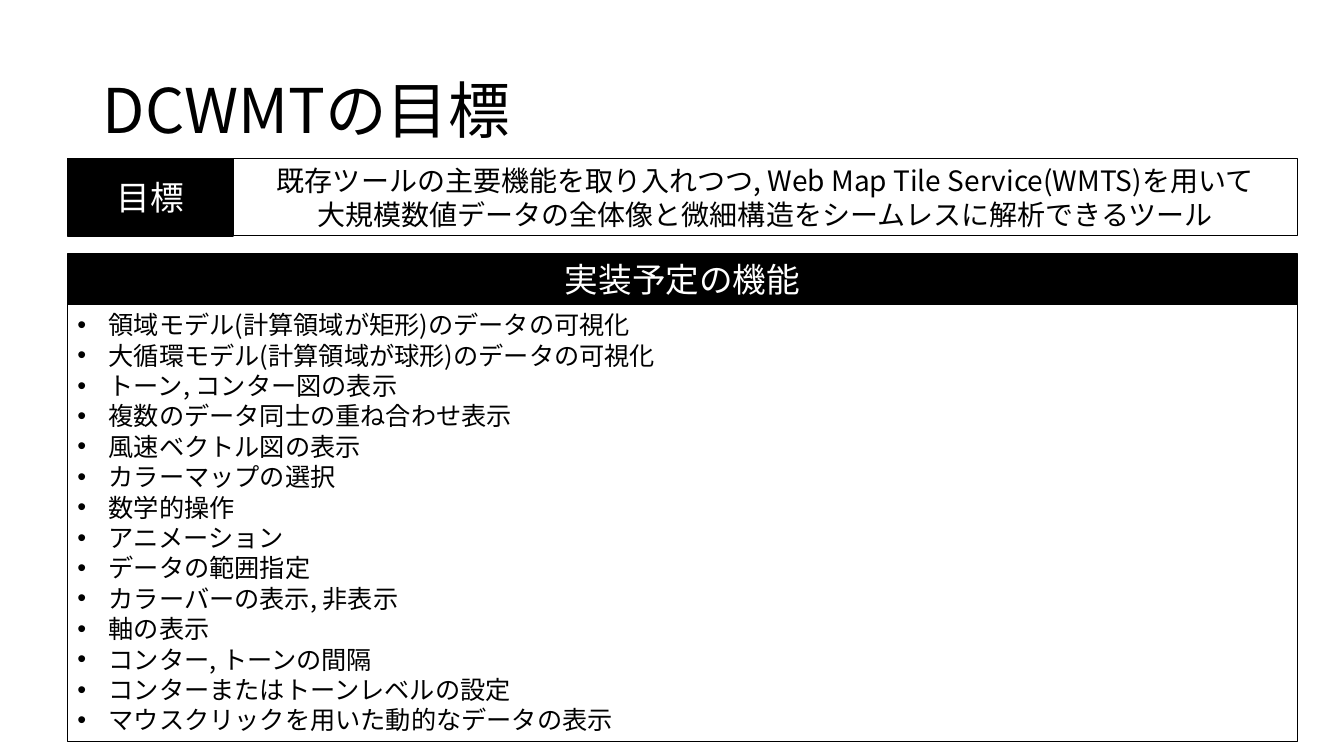
"""Build the slide on the goals of DCWMT."""
from lxml import etree
from pptx import Presentation
from pptx.dml.color import RGBColor
from pptx.enum.lang import MSO_LANGUAGE_ID
from pptx.enum.shapes import MSO_SHAPE
from pptx.enum.text import MSO_ANCHOR, PP_ALIGN
from pptx.oxml.ns import qn
from pptx.util import Inches, Pt

BLACK = RGBColor(0, 0, 0)
WHITE = RGBColor(255, 255, 255)
FACE = "Noto Sans CJK JP"
JAPAN = MSO_LANGUAGE_ID.JAPANESE
RECT = MSO_SHAPE.RECTANGLE
MID, TOP = MSO_ANCHOR.MIDDLE, MSO_ANCHOR.TOP
LEFT, CENTER = PP_ALIGN.LEFT, PP_ALIGN.CENTER

TITLE = ["DCWMTの目標"]
LABEL = ["目標"]
GOAL = [
    "既存ツールの主要機能を取り入れつつ, Web Map Tile Service(WMTS)を用いて",
    "大規模数値データの全体像と微細構造をシームレスに解析できるツール",
]
HEAD = ["実装予定の機能"]
ITEMS = [
    "領域モデル(計算領域が矩形)のデータの可視化",
    "大循環モデル(計算領域が球形)のデータの可視化",
    "トーン, コンター図の表示",
    "複数のデータ同士の重ね合わせ表示",
    "風速ベクトル図の表示",
    "カラーマップの選択",
    "数学的操作",
    "アニメーション",
    "データの範囲指定",
    "カラーバーの表示, 非表示",
    "軸の表示",
    "コンター, トーンの間隔",
    "コンターまたはトーンレベルの設定",
    "マウスクリックを用いた動的なデータの表示",
]

EDGE, WIDE = 0.67, 12.2
SPLIT = 1.64
GOAL_Y, GOAL_H = 1.57, 0.77
HEAD_Y, HEAD_H = 2.52, 0.5
LIST_H = 4.34
INDENT = 0.31


def add_bullet(para):
    props = para._p.get_or_add_pPr()
    props.set("marL", str(Inches(INDENT)))
    props.set("indent", str(-Inches(INDENT)))
    font = etree.SubElement(props, qn("a:buFont"))
    font.set("typeface", "Arial")
    etree.SubElement(props, qn("a:buChar")).set("char", "•")


def write(shape, lines, size, color=BLACK, align=CENTER, anchor=MID,
          space=None, bullet=False):
    frame = shape.text_frame
    frame.word_wrap = True
    frame.vertical_anchor = anchor
    look = {"name": FACE, "size": Pt(size), "language_id": JAPAN}
    for i, line in enumerate(lines):
        para = frame.paragraphs[0] if i == 0 else frame.add_paragraph()
        if bullet:
            add_bullet(para)
        para.alignment = align
        para.line_spacing = space
        run = para.add_run()
        run.text = line
        run.font.color.rgb = color
        for key, value in look.items():
            setattr(run.font, key, value)
        east = etree.SubElement(run._r.get_or_add_rPr(), qn("a:ea"))
        east.set("typeface", FACE)


def add_box(slide, area, fill=None):
    box = slide.shapes.add_shape(RECT, *map(Inches, area))
    box.shadow.inherit = False
    if fill is None:
        box.fill.background()
    else:
        box.fill.solid()
        box.fill.fore_color.rgb = fill
    box.line.color.rgb = BLACK
    box.line.width = Pt(0.75 if fill is None else 1)
    return box


def main():
    deck = Presentation()
    deck.slide_width, deck.slide_height = Inches(13.33), Inches(7.5)
    slide = deck.slides.add_slide(deck.slide_layouts[6])

    title = slide.shapes.add_textbox(*map(Inches, (0.92, 0.4, 11.5, 1.45)))
    write(title, TITLE, 44, align=LEFT, space=0.9)

    label = add_box(slide, (EDGE, GOAL_Y, SPLIT, GOAL_H), BLACK)
    write(label, LABEL, 24, WHITE)
    goal = add_box(slide, (EDGE + SPLIT, GOAL_Y, WIDE - SPLIT, GOAL_H))
    write(goal, GOAL, 20, anchor=TOP, space=Pt(24.2))

    items = add_box(slide, (EDGE, HEAD_Y + HEAD_H, WIDE, LIST_H))
    write(items, ITEMS, 18, align=LEFT, anchor=TOP, space=Pt(21.7),
          bullet=True)
    head = add_box(slide, (EDGE, HEAD_Y, WIDE, HEAD_H), BLACK)
    write(head, HEAD, 24, WHITE)

    deck.save("out.pptx")


if __name__ == "__main__":
    main()
